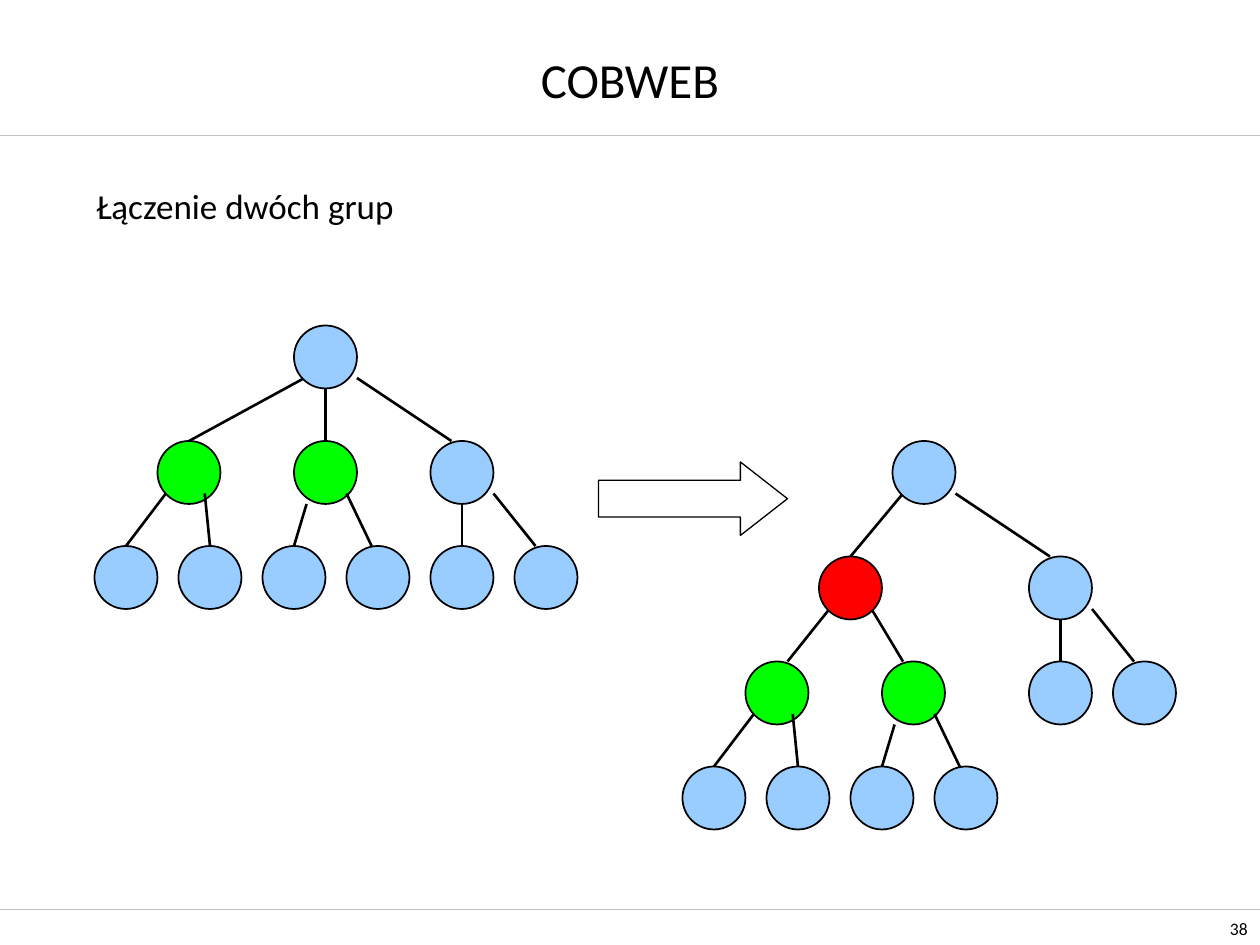
from dataclasses import dataclass

from lxml import etree
from pptx import Presentation
from pptx import util as u
from pptx.dml.color import RGBColor
from pptx.enum import shapes, text
from pptx.oxml.ns import qn


@dataclass(frozen=True)
class Theme:
    font: str = "Calibri"
    ink: str = "000000"
    rule: str = "C0C0C0"
    plain: str = "99CCFF"
    merged: str = "00FF00"
    parent: str = "FF0000"
    title_size: float = 28
    label_size: float = 20
    number_size: float = 10
    rule_width: float = 0.25
    arrow_width: float = 0.75
    node_width: float = 1
    edge_width: float = 1.5


THEME = Theme()
COLUMNS, ROWS = 120, 90  # square grid cells, twelve to the inch
NODE = 6

# Child columns and edges, relative to the top left of the branch's top node.
CHILD_ROW = 10
BRANCHES = {
    "left": ((-6, 2), (((0.8, 5), (-3, 10)), ((4.5, 5), (5, 10)))),
    "middle": ((-3, 5), (((1.2, 6), (0, 10)), ((5, 5), (7.4, 10)))),
    "right": ((0, 8), (((3, 6), (3, 10)), ((6, 5), (10, 10)))),
}


def grid(*cells):
    return [u.Inches(c / 12) for c in cells]


def set_line(line, color, width):
    line.color.rgb = RGBColor.from_string(color)
    line.width = u.Pt(width)


def add_line(parent, start, end, color=THEME.ink, width=THEME.edge_width):
    line = parent.shapes.add_connector(
        shapes.MSO_CONNECTOR.STRAIGHT, *grid(*start, *end))
    set_line(line.line, color, width)
    etree.SubElement(line._element.spPr, qn("a:effectLst"))


def add_node(tree, x, y, color=THEME.plain):
    sp = tree.shapes.add_shape(
        shapes.MSO_SHAPE.OVAL, *grid(x, y, NODE, NODE))
    sp.shadow.inherit = False
    sp.fill.solid()
    sp.fill.fore_color.rgb = RGBColor.from_string(color)
    set_line(sp.line, THEME.ink, THEME.node_width)


def add_branch(tree, kind, x, y, color=THEME.plain):
    """Draw a node with its two leaves."""
    columns, edges = BRANCHES[kind]
    add_node(tree, x, y, color)
    for dx in columns:
        add_node(tree, x + dx, y + CHILD_ROW)
    for (x1, y1), (x2, y2) in edges:
        add_line(tree, (x + x1, y + y1), (x + x2, y + y2))


def add_tree_before(s):
    tree = s.shapes.add_group_shape()
    add_branch(tree, "left", 15, 42, THEME.merged)
    add_branch(tree, "middle", 28, 42, THEME.merged)
    add_branch(tree, "right", 41, 42)
    for start, end in (((29, 36), (18, 42)),
                       ((31, 37), (31, 42)),
                       ((34, 36), (43, 42))):
        add_line(tree, start, end)
    add_node(tree, 28, 31)


def add_tree_after(s):
    tree = s.shapes.add_group_shape()
    add_branch(tree, "left", 71, 63, THEME.merged)
    add_branch(tree, "middle", 84, 63, THEME.merged)
    add_branch(tree, "right", 98, 53)
    for start, end in (((86, 47), (81, 53)),
                       ((91, 47), (100, 53)),
                       ((79, 58), (75, 63)),
                       ((83, 58), (86, 63))):
        add_line(tree, start, end)
    add_node(tree, 85, 42)
    add_node(tree, 78, 53, THEME.parent)


def add_arrow(s):
    sp = s.shapes.add_shape(
        shapes.MSO_SHAPE.RIGHT_ARROW, *grid(57, 44, 18, 7))
    sp.adjustments[0], sp.adjustments[1] = 0.5, 0.64
    sp.shadow.inherit = False
    sp.fill.background()
    set_line(sp.line, THEME.ink, THEME.arrow_width)


def write(sp, words, size, align, anchor, wrap=True):
    tf = sp.text_frame
    tf.text = words
    tf.word_wrap = wrap
    tf.vertical_anchor = anchor
    p = tf.paragraphs[0]
    p.alignment = align
    font = p.runs[0].font
    font.name, font.size = THEME.font, u.Pt(size)
    font.color.rgb = RGBColor.from_string(THEME.ink)


def add_title(s, words):
    sp = s.shapes.title
    sp.left, sp.top, sp.width, sp.height = grid(9, 0, 102, 15)
    write(sp, words, THEME.title_size, text.PP_ALIGN.CENTER,
          text.MSO_ANCHOR.MIDDLE)


def add_label(s, words):
    sp = s.shapes.add_textbox(*grid(8, 17, 34, 5.2))
    write(sp, words, THEME.label_size, text.PP_ALIGN.LEFT,
          text.MSO_ANCHOR.TOP, wrap=False)


def add_page_number(s, number):
    sp = s.shapes.add_textbox(*grid(113.9, 86.6, 6.1, 3.4))
    write(sp, number, THEME.number_size, text.PP_ALIGN.RIGHT,
          text.MSO_ANCHOR.BOTTOM)


def main():
    prs = Presentation()
    prs.slide_width, prs.slide_height = grid(COLUMNS, ROWS)
    s = prs.slides.add_slide(prs.slide_layouts.get_by_name("Title Only"))
    for y in (12.87, 86.6):
        add_line(s, (0, y), (COLUMNS, y), THEME.rule, THEME.rule_width)
    add_title(s, "COBWEB")
    add_label(s, "Łączenie dwóch grup")
    add_tree_before(s)
    add_arrow(s)
    add_tree_after(s)
    add_page_number(s, "38")
    prs.save("out.pptx")


if __name__ == "__main__":
    main()
